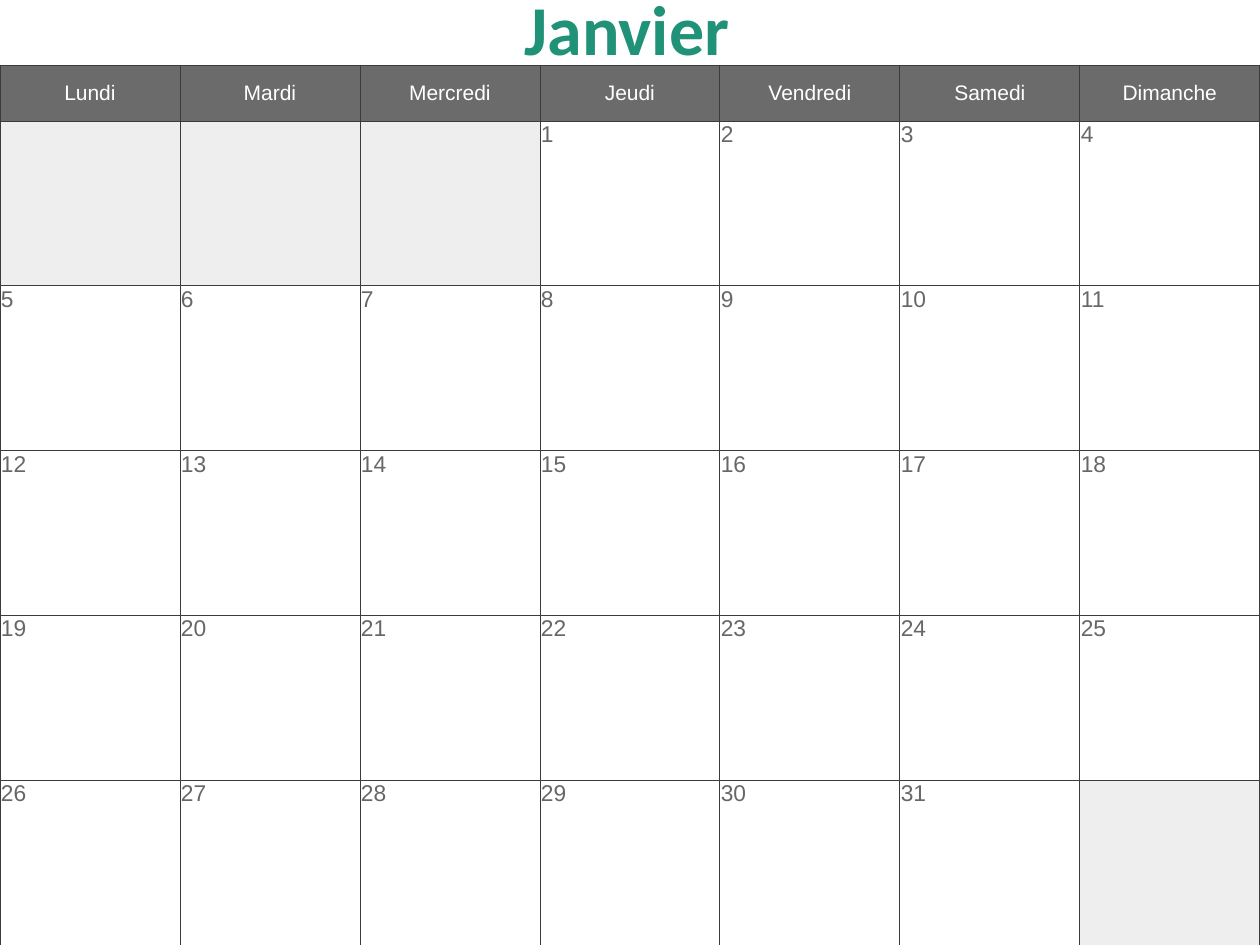
"""Build a monthly calendar slide for January."""
from dataclasses import dataclass

from lxml import etree
from pptx import Presentation
from pptx import util as u
from pptx.dml.color import RGBColor
from pptx.enum import text
from pptx.oxml.ns import qn

PX_PER_INCH = 126
SLIDE_WIDTH, SLIDE_HEIGHT = 1260, 945
TABLE_TOP, HEADER_HEIGHT = 65, 56
WEEKS = 5
FIRST_COLUMN, LAST_DAY = 3, 31
DAYS = ["Lundi", "Mardi", "Mercredi", "Jeudi", "Vendredi", "Samedi", "Dimanche"]

GREEN = RGBColor(0x20, 0x92, 0x77)
HEADER_GRAY = RGBColor(0x6B, 0x6B, 0x6B)
DAY_GRAY = RGBColor(0x67, 0x67, 0x67)
EMPTY_GRAY = RGBColor(0xEE, 0xEE, 0xEE)
BORDER_GRAY = RGBColor(0x3B, 0x3B, 0x3B)
WHITE = RGBColor(0xFF, 0xFF, 0xFF)


@dataclass(frozen=True)
class CellStyle:
    """Look of one kind of calendar cell."""
    fill: RGBColor
    color: RGBColor
    size: int
    align: text.PP_ALIGN
    anchor: text.MSO_ANCHOR


HEADER = CellStyle(HEADER_GRAY, WHITE, 12, text.PP_ALIGN.CENTER, text.MSO_ANCHOR.MIDDLE)
DAY = CellStyle(WHITE, DAY_GRAY, 13, text.PP_ALIGN.LEFT, text.MSO_ANCHOR.TOP)
EMPTY = CellStyle(EMPTY_GRAY, DAY_GRAY, 13, text.PP_ALIGN.LEFT, text.MSO_ANCHOR.TOP)


def px(length: int) -> u.Emu:
    """Convert pixels to EMU."""
    return u.Emu(round(length * u.Inches(1) / PX_PER_INCH))


def set_borders(cell) -> None:
    """Draw a thin line on all four sides of a cell."""
    properties = cell._tc.get_or_add_tcPr()
    for index, side in enumerate(("a:lnL", "a:lnR", "a:lnT", "a:lnB")):
        line = etree.Element(qn(side), w=str(u.Pt(0.5)))
        fill = etree.SubElement(line, qn("a:solidFill"))
        etree.SubElement(fill, qn("a:srgbClr"), val=str(BORDER_GRAY))
        properties.insert(index, line)


def fill_cell(cell, label: str, style: CellStyle) -> None:
    """Write and format one calendar cell."""
    cell.fill.solid()
    cell.fill.fore_color.rgb = style.fill
    cell.vertical_anchor = style.anchor
    cell.margin_left = cell.margin_right = cell.margin_top = px(1)
    cell.margin_bottom = 0
    set_borders(cell)
    cell.text_frame.text = label
    paragraph = cell.text_frame.paragraphs[0]
    paragraph.alignment = style.align
    for run in paragraph.runs:
        run.font.name = "Arial"
        run.font.size = u.Pt(style.size)
        run.font.color.rgb = style.color


def add_title(slide, label: str) -> None:
    """Place the month name in the title placeholder."""
    title = slide.shapes.title
    title.left, title.top, title.width, title.height = px(511), px(-21), px(232), px(97)
    frame = title.text_frame
    frame.text = label
    frame.word_wrap = False
    frame.auto_size = text.MSO_AUTO_SIZE.SHAPE_TO_FIT_TEXT
    frame.vertical_anchor = text.MSO_ANCHOR.TOP
    paragraph = frame.paragraphs[0]
    paragraph.alignment = text.PP_ALIGN.CENTER
    font = paragraph.runs[0].font
    font.name, font.size, font.bold = "Calibri", u.Pt(40), True
    font.color.rgb = GREEN


def add_calendar(slide) -> None:
    """Add the weekday header and the grid of days."""
    height = SLIDE_HEIGHT - TABLE_TOP
    table = slide.shapes.add_table(
        WEEKS + 1, len(DAYS), 0, px(TABLE_TOP), px(SLIDE_WIDTH), px(height)).table
    table.first_row = table.horz_banding = False
    table.rows[0].height = px(HEADER_HEIGHT)
    for week in range(1, WEEKS + 1):
        table.rows[week].height = px(height - HEADER_HEIGHT) // WEEKS
    for column, name in enumerate(DAYS):
        table.columns[column].width = px(SLIDE_WIDTH // len(DAYS))
        fill_cell(table.cell(0, column), name, HEADER)
        for week in range(WEEKS):
            day = week * len(DAYS) + column - FIRST_COLUMN + 1
            in_month = 1 <= day <= LAST_DAY
            fill_cell(table.cell(week + 1, column),
                      str(day) if in_month else "", DAY if in_month else EMPTY)


def main() -> None:
    """Create and save the presentation."""
    presentation = Presentation()
    presentation.slide_width, presentation.slide_height = px(SLIDE_WIDTH), px(SLIDE_HEIGHT)
    slide = presentation.slides.add_slide(presentation.slide_layouts[5])
    add_calendar(slide)
    add_title(slide, "Janvier")
    presentation.save("out.pptx")


if __name__ == "__main__":
    main()
